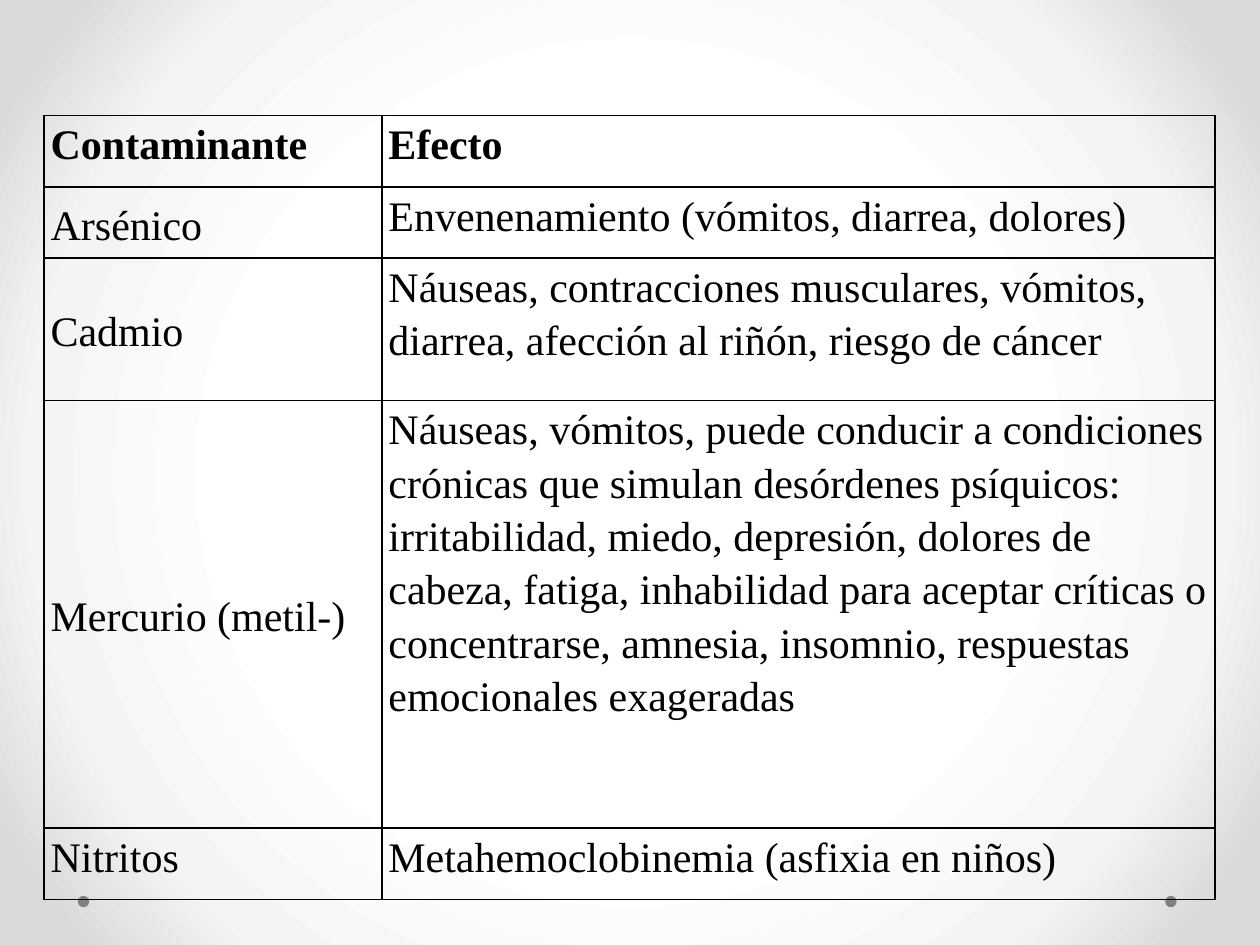
"""Builds a slide with a table of pollutants and their effects."""
from dataclasses import dataclass

from lxml import etree
from pptx import Presentation
from pptx.dml.color import RGBColor
from pptx.enum.shapes import MSO_SHAPE
from pptx.enum.text import MSO_ANCHOR, PP_ALIGN
from pptx.oxml import parse_xml
from pptx.oxml.ns import nsdecls
from pptx.slide import Slide
from pptx.table import _Cell
from pptx.util import Cm, Pt

OVAL = MSO_SHAPE.OVAL
TOP, MIDDLE = MSO_ANCHOR.TOP, MSO_ANCHOR.MIDDLE
LEFT, JUSTIFY = PP_ALIGN.LEFT, PP_ALIGN.JUSTIFY


@dataclass(frozen=True)
class Theme:
    font: str = "Times New Roman"
    size: Pt = Pt(24)
    ink: str = "000000"
    dot: str = "808080"
    line: Pt = Pt(1)
    glow: tuple = ((50, "FFFFFF"), (76, "F4F4F4"), (92, "DADADA"))


@dataclass(frozen=True)
class Entry:
    name: str
    effect: str
    lines: int = 1
    anchor: MSO_ANCHOR = MIDDLE
    align: PP_ALIGN = LEFT
    bold: bool = False


THEME = Theme()
ENTRIES = (
    Entry("Contaminante", "Efecto", anchor=TOP, align=JUSTIFY, bold=True),
    Entry("Arsénico", "Envenenamiento (vómitos, diarrea, dolores)"),
    Entry("Cadmio", "Náuseas, contracciones musculares, vómitos, diarrea, "
          "afección al riñón, riesgo de cáncer", lines=2),
    Entry("Mercurio (metil-)", "Náuseas, vómitos, puede conducir a condiciones "
          "crónicas que simulan desórdenes psíquicos: irritabilidad, miedo, "
          "depresión, dolores de cabeza, fatiga, inhabilidad para aceptar "
          "críticas o concentrarse, amnesia, insomnio, respuestas emocionales "
          "exageradas", lines=6),
    Entry("Nitritos", "Metahemoclobinemia (asfixia en niños)",
          anchor=TOP, align=JUSTIFY),
)
WIDTHS = (Cm(6.81), Cm(16.79))
HEIGHT = Cm(15.8)
DOTS = (Cm(23.49), Cm(1.57))


def paint_back(slide: Slide) -> None:
    stops = "".join(
        f'<a:gs pos="{pos * 1000}"><a:srgbClr val="{color}"/></a:gs>'
        for pos, color in THEME.glow)
    back = parse_xml(
        f'<p:bg {nsdecls("p", "a")}><p:bgPr><a:gradFill rotWithShape="1">'
        f'<a:gsLst>{stops}</a:gsLst><a:path path="circle">'
        '<a:fillToRect l="50000" t="50000" r="50000" b="50000"/></a:path>'
        '</a:gradFill><a:effectLst/></p:bgPr></p:bg>')
    slide.element.cSld.insert(0, back)


def add_dot(slide: Slide, left: Cm) -> None:
    dot = slide.shapes.add_shape(OVAL, left, Cm(18.06), Cm(0.23), Cm(0.23))
    dot.shadow.inherit = False
    dot.fill.solid()
    dot.fill.fore_color.rgb = RGBColor.from_string(THEME.dot)
    dot.line.fill.background()


def add_edges(cell: _Cell) -> None:
    props = cell._tc.get_or_add_tcPr()
    for side in "LRTB":
        edge = parse_xml(
            f'<a:ln{side} {nsdecls("a")} w="{THEME.line}"><a:solidFill>'
            f'<a:srgbClr val="{THEME.ink}"/></a:solidFill></a:ln{side}>')
        etree.ElementBase.append(props, edge)


def fill_cell(cell: _Cell, text: str, bold: bool, anchor: MSO_ANCHOR = TOP,
              align: PP_ALIGN = LEFT) -> None:
    add_edges(cell)
    cell.fill.background()
    cell.margin_left = cell.margin_right = Cm(0.13)
    cell.margin_top = cell.margin_bottom = 0
    cell.vertical_anchor = anchor
    cell.text = text
    para = cell.text_frame.paragraphs[0]
    para.alignment = align
    para.line_spacing = 1.15
    para.font.name = THEME.font
    para.font.size = THEME.size
    para.font.bold = bold
    para.font.color.rgb = RGBColor.from_string(THEME.ink)


def add_grid(slide: Slide, entries: tuple[Entry, ...]) -> None:
    grid = slide.shapes.add_table(len(entries), len(WIDTHS), Cm(0.89), Cm(2.33),
                                  sum(WIDTHS), HEIGHT).table
    grid.first_row = grid.horz_banding = False
    for column, width in zip(grid.columns, WIDTHS):
        column.width = width
    unit = HEIGHT // sum(entry.lines for entry in entries)
    for row, entry in zip(grid.rows, entries):
        row.height = unit * entry.lines
        name, effect = row.cells
        fill_cell(name, entry.name, entry.bold, entry.anchor, entry.align)
        fill_cell(effect, entry.effect, entry.bold)


def main() -> None:
    deck = Presentation()
    deck.slide_width, deck.slide_height = Cm(25.4), Cm(19.05)
    slide = deck.slides.add_slide(deck.slide_layouts[6])
    paint_back(slide)
    for left in DOTS:
        add_dot(slide, left)
    add_grid(slide, ENTRIES)
    deck.save("out.pptx")


if __name__ == "__main__":
    main()
